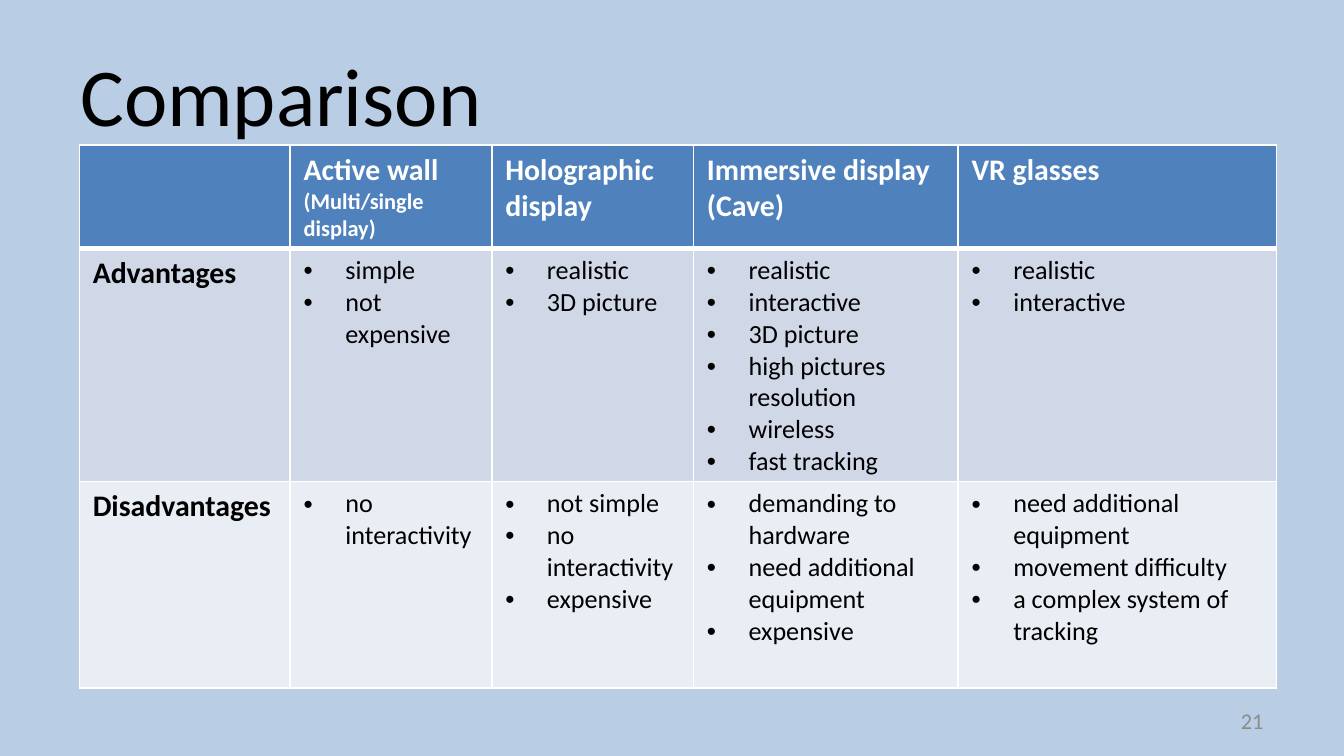
from dataclasses import dataclass

from lxml import etree
from pptx import Presentation
from pptx import util as u
from pptx.dml import color
from pptx.enum import text
from pptx.oxml import ns


@dataclass(frozen=True)
class Theme:
    font: str = "Calibri"
    background: str = "B9CDE5"
    header: str = "4F81BD"
    bands: tuple = ("D0D8E8", "E9EDF4")
    ink: str = "000000"
    light: str = "FFFFFF"
    muted: str = "8C8C8C"
    title: int = 44
    heading: int = 16
    body: int = 14
    small: int = 12
    indent: float = 0.31
    rule: int = 1
    heavy_rule: int = 3


class ComparisonSlide:
    """Draws styled elements placed by percentages of the slide's size."""

    def __init__(self, deck, theme):
        self.deck, self.theme = deck, theme
        self.slide = deck.slides.add_slide(deck.slide_layouts[6])
        fill = self.slide.background.fill
        fill.solid()
        fill.fore_color.rgb = color.RGBColor.from_string(theme.background)

    def area(self, left, top, width, height):
        across, down = self.deck.slide_width, self.deck.slide_height
        return [round(share * side / 100) for share, side in
                zip((left, top, width, height), (across, down, across, down))]

    def style(self, paragraph, size, ink, bold=False):
        for run in paragraph.runs:
            run.font.name = self.theme.font
            run.font.size = u.Pt(size)
            run.font.bold = bold
            run.font.color.rgb = color.RGBColor.from_string(ink)

    def label(self, wording, area, size, ink, align=text.PP_ALIGN.LEFT):
        frame = self.slide.shapes.add_textbox(*self.area(*area)).text_frame
        frame.word_wrap = True
        frame.vertical_anchor = text.MSO_ANCHOR.MIDDLE
        frame.text = wording
        frame.paragraphs[0].alignment = align
        self.style(frame.paragraphs[0], size, ink)

    def bullet(self, paragraph):
        properties = paragraph._p.get_or_add_pPr()
        indent = u.Inches(self.theme.indent)
        properties.set("marL", str(indent))
        properties.set("indent", str(-indent))
        etree.SubElement(properties, ns.qn("a:buFont"), typeface="Arial")
        etree.SubElement(properties, ns.qn("a:buChar"), char="•")

    def borders(self, cell, top, bottom):
        rule = self.theme.rule
        edges = {"L": rule, "R": rule, "T": top, "B": bottom}
        for place, (edge, weight) in enumerate(edges.items()):
            line = etree.Element(ns.qn(f"a:ln{edge}"), w=str(u.Pt(weight)))
            fill = etree.SubElement(line, ns.qn("a:solidFill"))
            etree.SubElement(fill, ns.qn("a:srgbClr"), val=self.theme.light)
            cell._tc.get_or_add_tcPr().insert(place, line)

    def cell(self, cell, lines, row, column):
        theme = self.theme
        cell.fill.solid()
        cell.fill.fore_color.rgb = color.RGBColor.from_string(
            theme.bands[row - 1] if row else theme.header)
        self.borders(cell, theme.heavy_rule if row == 1 else theme.rule,
                     theme.rule if row else theme.heavy_rule)
        cell.text_frame.text = "\n".join(lines)
        for position, paragraph in enumerate(cell.text_frame.paragraphs):
            if row and column:
                self.bullet(paragraph)
                self.style(paragraph, theme.body, theme.ink)
            else:
                size = theme.small if position else theme.heading
                self.style(paragraph, size, theme.ink if row else theme.light, True)

    def table(self, rows, area, widths, heights):
        bounds = self.area(*area)
        frame = self.slide.shapes.add_table(len(rows), len(widths), *bounds)
        grid = frame.table
        for column, width in zip(grid.columns, widths):
            column.width = u.Inches(width)
        for row, height in zip(grid.rows, heights):
            row.height = u.Inches(height)
        frame.width, frame.height = bounds[2:]
        for row, contents in enumerate(rows):
            for column, lines in enumerate(contents):
                self.cell(grid.cell(row, column), lines, row, column)


COMPARISON = [
    [[], ["Active wall", "(Multi/single display)"], ["Holographic display"],
     ["Immersive display (Cave)"], ["VR glasses"]],
    [["Advantages"], ["simple", "not expensive"], ["realistic", "3D picture"],
     ["realistic", "interactive", "3D picture", "high pictures resolution",
      "wireless", "fast tracking"],
     ["realistic", "interactive"]],
    [["Disadvantages"], ["no interactivity"],
     ["not simple", "no interactivity", "expensive"],
     ["demanding to hardware", "need additional equipment", "expensive"],
     ["need additional equipment", "movement difficulty",
      "a complex system of tracking"]],
]


def main():
    deck = Presentation()
    deck.slide_width = u.Inches(10)
    deck.slide_height = deck.slide_width * 9 // 16
    theme = Theme()
    page = ComparisonSlide(deck, theme)
    page.label("Comparison", (5, 4, 90, 16.7), theme.title, theme.ink)
    page.table(COMPARISON, (5.9, 19.2, 89.1, 71.8),
               widths=(1.57, 1.5, 1.5, 1.97, 2.37), heights=(0.71, 1.6, 1.54))
    page.label("21", (71.7, 92.7, 23.3, 5.3), theme.small, theme.muted,
               text.PP_ALIGN.RIGHT)
    deck.save("out.pptx")


if __name__ == "__main__":
    main()
